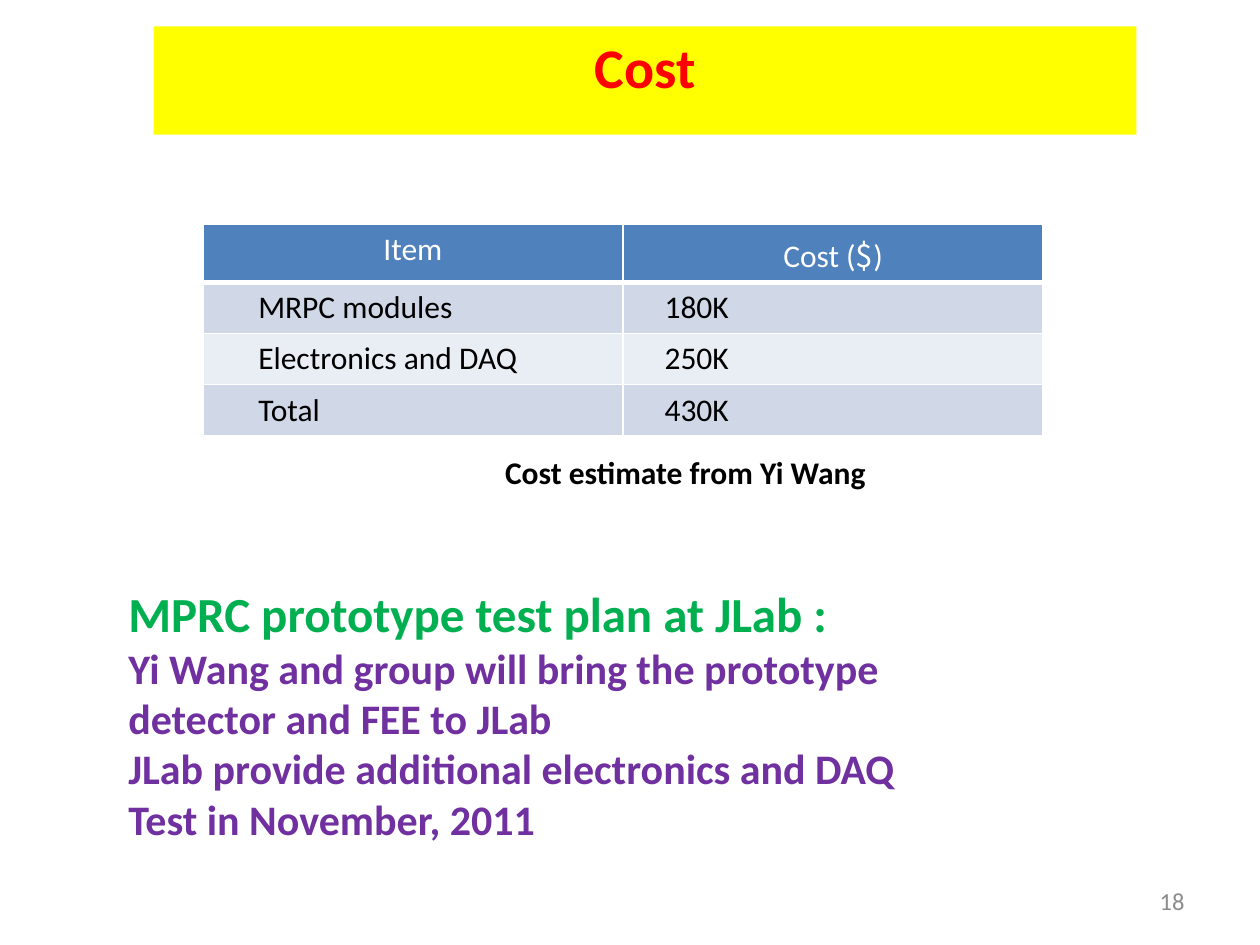
from lxml import etree
from pptx import Presentation
from pptx.dml import color
from pptx.enum import text
from pptx.oxml import ns
from pptx.util import Inches, Pt

FONT = "Calibri"


def rgb(value):
    """Return the colour for a hex string."""
    return color.RGBColor.from_string(value)


def style(para, size, shade, bold=False, align=text.PP_ALIGN.LEFT):
    """Format a paragraph and all of its runs."""
    para.alignment = align
    for span in para.runs:
        span.font.name = FONT
        span.font.size = Pt(size)
        span.font.bold = bold
        span.font.color.rgb = rgb(shade)


def add_title(slide, left, top, width, height):
    """Turn the title placeholder into a filled banner."""
    title = slide.shapes.title
    title.left, title.top, title.width, title.height = left, top, width, height
    title.fill.solid()
    title.fill.fore_color.rgb = rgb("FFFF00")
    title.text_frame.text = "Cost"
    title.text_frame.vertical_anchor = text.MSO_ANCHOR.TOP
    style(title.text_frame.paragraphs[0], 32, "FF0000", True, text.PP_ALIGN.CENTER)


def add_text(slide, left, top, width, height, lines, bold=True,
             align=text.PP_ALIGN.LEFT, anchor=text.MSO_ANCHOR.TOP):
    """Add a text box with one paragraph per (words, size, colour) line."""
    box = slide.shapes.add_textbox(left, top, width, height)
    frame = box.text_frame
    frame.vertical_anchor = anchor
    frame.text = "\n".join(words for words, _, _ in lines)
    for para, (_, size, shade) in zip(frame.paragraphs, lines):
        style(para, size, shade, bold, align)


def add_borders(cell, bottom):
    """Draw white lines around a cell, the bottom one in the given points."""
    properties = cell._tc.get_or_add_tcPr()
    for side, points in (("L", 1), ("R", 1), ("T", 1), ("B", bottom)):
        line = etree.SubElement(properties, ns.qn(f"a:ln{side}"), w=str(Pt(points)))
        fill = etree.SubElement(line, ns.qn("a:solidFill"))
        etree.SubElement(fill, ns.qn("a:srgbClr"), val="FFFFFF")


def add_cost_table(slide, left, top, width, height):
    """Add the cost table with a header and banded rows."""
    rows = [("Item", "Cost ($)"), ("MRPC modules", "180K"),
            ("Electronics and DAQ", "250K"), ("Total", "430K")]
    header_height = Inches(0.46)
    row_height = (height - header_height) // (len(rows) - 1)
    table = slide.shapes.add_table(len(rows), 2, left, top, width, height).table
    for row, values in enumerate(rows):
        header = row == 0
        table.rows[row].height = header_height if header else row_height
        for column, value in enumerate(values):
            cell = table.cell(row, column)
            para = cell.text_frame.paragraphs[0]
            para.text = value
            add_borders(cell, 3 if header else 1)
            cell.fill.solid()
            if header:
                cell.fill.fore_color.rgb = rgb("4F81BD")
                style(para, 18, "FFFFFF", align=text.PP_ALIGN.CENTER)
            else:
                cell.fill.fore_color.rgb = rgb("D0D8E8" if row % 2 else "E9EDF4")
                cell.margin_left = Inches((0.44, 0.33)[column])
                style(para, 18, "000000")
    set_currency_font(table.cell(0, 1).text_frame.paragraphs[0])


def set_currency_font(para):
    """Split the header at its dollar sign and give the sign its own font."""
    before, after = para.text.split("$")
    para.text = before
    for words in ("$", after):
        para.add_run().text = words
    style(para, 18, "FFFFFF", align=text.PP_ALIGN.CENTER)
    para.runs[1].font.name = "Noto Sans CJK KR"


def main():
    """Build the cost slide."""
    deck = Presentation()
    deck.slide_width, deck.slide_height = Inches(10), Inches(7.5)
    slide = deck.slides.add_slide(deck.slide_layouts[5])
    add_title(slide, Inches(1.22), Inches(0.21), Inches(7.8), Inches(0.86))
    add_cost_table(slide, Inches(1.61), Inches(1.78), Inches(6.67), Inches(1.67))
    add_text(slide, Inches(3.91), Inches(3.55), Inches(3.09), Inches(0.4),
             [("Cost estimate from Yi Wang", 18, "000000")])
    plan = ["Yi Wang and group will bring the prototype",
            "detector and FEE to JLab",
            "JLab provide additional electronics and DAQ",
            "Test in November, 2011"]
    add_text(slide, Inches(0.92), Inches(4.58), Inches(6.34), Inches(2.49),
             [("MPRC prototype test plan at JLab :", 28, "00B050")]
             + [(words, 24, "7030A0") for words in plan])
    add_text(slide, Inches(8.98), Inches(6.95), Inches(0.52), Inches(0.4),
             [("18", 14, "8C8C8C")], False, text.PP_ALIGN.RIGHT, text.MSO_ANCHOR.MIDDLE)
    deck.save("out.pptx")


if __name__ == "__main__":
    main()
